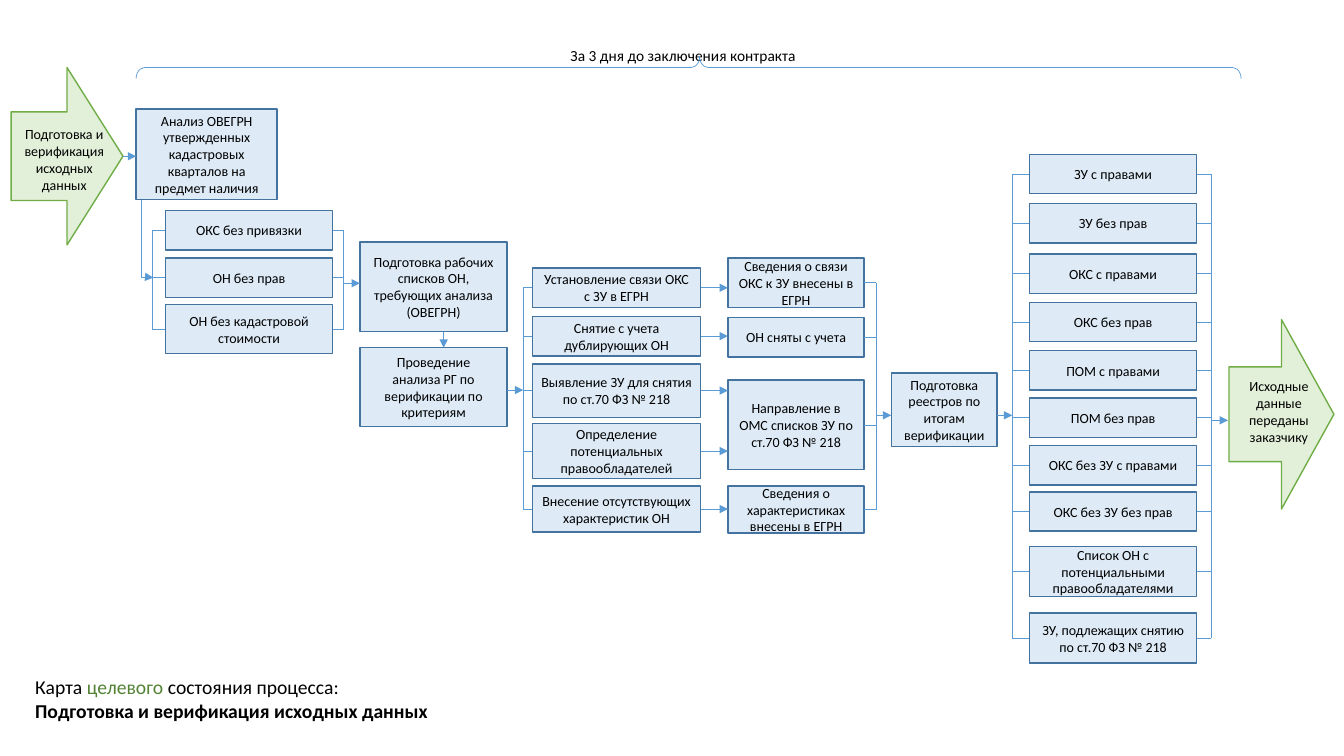
from dataclasses import dataclass

from lxml import etree
from pptx import Presentation
from pptx.dml.color import RGBColor
from pptx.enum.shapes import MSO_CONNECTOR as LINK, MSO_SHAPE as SHAPE
from pptx.enum.text import MSO_ANCHOR as ANCHOR, PP_ALIGN as ALIGN
from pptx.oxml.ns import qn
from pptx.util import Inches, Pt


@dataclass(frozen=True)
class Theme:
    font: str = "Calibri"
    text: str = "000000"
    accent: str = "548235"
    step_fill: str = "DEEBF7"
    step_line: str = "43739E"
    stage_fill: str = "E2F0D9"
    stage_line: str = "70AD47"
    link: str = "5B9BD5"
    body: float = 10
    caption: float = 11
    title: float = 14
    outline: float = 1
    link_width: float = 0.5


@dataclass(frozen=True)
class Box:
    left: float
    top: float
    width: float
    height: float

    @property
    def right(self):
        return self.left + self.width

    @property
    def bottom(self):
        return self.top + self.height

    @property
    def center(self):
        return self.left + self.width / 2

    @property
    def middle(self):
        return self.top + self.height / 2

    def emu(self):
        return [Inches(v) for v in (self.left, self.top, self.width, self.height)]


THEME = Theme()


# Basic parts
def write(shape, lines, size=THEME.body, align=ALIGN.CENTER, anchor=ANCHOR.MIDDLE, margin=0.1):
    """Each line is a list of (text, color, bold) runs."""
    frame = shape.text_frame
    frame.word_wrap = True
    frame.vertical_anchor = anchor
    frame.margin_left = frame.margin_right = Inches(margin)
    for i, runs in enumerate(lines):
        paragraph = frame.paragraphs[0] if i == 0 else frame.add_paragraph()
        paragraph.alignment = align
        for text, color, bold in runs:
            run = paragraph.add_run()
            run.text = text
            run.font.name = THEME.font
            run.font.size = Pt(size)
            run.font.bold = bold
            run.font.color.rgb = RGBColor.from_string(color)


def plain(text):
    return [[(text, THEME.text, False)]]


def add_block(slide, kind, box, line, fill=None, width=THEME.outline):
    block = slide.shapes.add_shape(kind, *box.emu())
    block.shadow.inherit = False
    if fill:
        block.fill.solid()
        block.fill.fore_color.rgb = RGBColor.from_string(fill)
    else:
        block.fill.background()
    block.line.color.rgb = RGBColor.from_string(line)
    block.line.width = Pt(width)
    return block


def step(slide, box, text, margin=0.1):
    block = add_block(slide, SHAPE.RECTANGLE, box, THEME.step_line, THEME.step_fill)
    write(block, plain(text), margin=margin)
    return box


def link(slide, x1, y1, x2, y2, arrow=False, kind=LINK.STRAIGHT):
    connector = slide.shapes.add_connector(kind, *[Inches(v) for v in (x1, y1, x2, y2)])
    connector.line.color.rgb = RGBColor.from_string(THEME.link)
    connector.line.width = Pt(THEME.link_width)
    properties = connector._element.spPr
    if arrow:
        etree.SubElement(properties.find(qn("a:ln")), qn("a:tailEnd"), type="triangle")
    etree.SubElement(properties, qn("a:effectLst"))
    return connector


def drop_link(slide, x1, y1, x2, y2):
    """Elbow arrow that goes down first, then right."""
    long, short = y2 - y1, x2 - x1
    left, top = (x1 + x2 - long) / 2, (y1 + y2 - short) / 2
    elbow = link(slide, left, top, left + long, top + short, True, LINK.ELBOW)
    frame = elbow._element.spPr.find(qn("a:xfrm"))
    frame.set("rot", "16200000")
    frame.set("flipH", "1")
    guides = elbow._element.spPr.find(qn("a:prstGeom")).find(qn("a:avLst"))
    etree.SubElement(guides, qn("a:gd"), name="adj1", fmla="val 99100")


def bracket(slide, spine, boxes, side):
    """Vertical line with a tick to the given side of every box."""
    link(slide, spine, boxes[0].middle, spine, boxes[-1].middle)
    for box in boxes:
        link(slide, spine, box.middle, getattr(box, side), box.middle)


# Regions
def column(slide, area, rows):
    """Rows are (offset from the top, height, text[, margin])."""
    return [step(slide, Box(area.left, area.top + offset, area.width, height), *content)
            for offset, height, *content in rows]


def stage(slide, box, text):
    add_block(slide, SHAPE.RIGHT_ARROW, box, THEME.stage_line, THEME.stage_fill)
    label = Box(box.left, box.top + 0.52, 0.95 * box.width, 0.78)
    write(slide.shapes.add_textbox(*label.emu()), plain(text), margin=0.05)


def period(slide, area, text):
    caption = Box(area.left + 4.21, area.top, 2.85, 0.29)
    write(slide.shapes.add_textbox(*caption.emu()), plain(text), THEME.caption,
          ALIGN.LEFT, ANCHOR.TOP)
    depth = 0.22
    turned = Box(area.center - depth / 2, area.bottom - depth / 2 - area.width / 2,
                 depth, area.width)
    brace = add_block(slide, SHAPE.RIGHT_BRACE, turned, THEME.link, width=THEME.link_width)
    brace.rotation = 270
    brace.adjustments[0], brace.adjustments[1] = 0.38, 0.51


def title(slide, box):
    write(slide.shapes.add_textbox(*box.emu()), [
        [("Карта ", THEME.text, False), ("целевого", THEME.accent, False),
         (" состояния процесса:", THEME.text, False)],
        [("Подготовка и верификация исходных данных", THEME.text, True)],
    ], THEME.title, ALIGN.LEFT, ANCHOR.TOP)


def process(slide, area):
    x, y = area.left, area.top

    # Steps
    analysis = step(slide, Box(x, y, 1.4, 0.9),
                    "Анализ ОВЕГРН утвержденных кадастровых кварталов на предмет наличия")
    checks = column(slide, Box(x + 0.29, y + 1.01, 1.66, 1.42), [
        (0, 0.39, "ОКС без привязки"),
        (0.47, 0.39, "ОН без прав"),
        (0.93, 0.49, "ОН без кадастровой стоимости")])
    lists, review = column(slide, Box(x + 2.22, y + 1.32, 1.46, 1.83), [
        (0, 0.89, "Подготовка рабочих списков ОН, требующих анализа (ОВЕГРН)"),
        (1.05, 0.78, "Проведение анализа РГ по верификации по критериям", 0.15)])
    works = column(slide, Box(x + 3.93, y + 1.58, 1.67, 2.62), [
        (0, 0.39, "Установление связи ОКС с ЗУ в ЕГРН"),
        (0.48, 0.39, "Снятие с учета дублирующих ОН"),
        (0.95, 0.53, "Выявление ЗУ для снятия по ст.70 ФЗ № 218", 0.06),
        (1.54, 0.55, "Определение потенциальных правообладателей"),
        (2.16, 0.46, "Внесение отсутствующих характеристик ОН", 0.06)])
    results = column(slide, Box(x + 5.87, y + 1.48, 1.35, 2.73), [
        (0, 0.49, "Сведения о связи ОКС к ЗУ внесены в ЕГРН"),
        (0.59, 0.39, "ОН сняты с учета"),
        (1.21, 0.89, "Направление в ОМС списков ЗУ по ст.70 ФЗ № 218"),
        (2.26, 0.47, "Сведения о характеристиках внесены в ЕГРН")])
    registers = step(slide, Box(x + 7.49, y + 2.62, 1.05, 0.73),
                     "Подготовка реестров по итогам верификации")
    outputs = column(slide, Box(x + 8.86, y + 0.45, 1.66, 5.05), [
        (0, 0.39, "ЗУ с правами"),
        (0.49, 0.39, "ЗУ без прав"),
        (0.99, 0.39, "ОКС с правами"),
        (1.47, 0.39, "ОКС без прав"),
        (1.95, 0.39, "ПОМ с правами"),
        (2.42, 0.39, "ПОМ без прав"),
        (2.89, 0.39, "ОКС без ЗУ с правами"),
        (3.35, 0.39, "ОКС без ЗУ без прав"),
        (3.89, 0.5, "Список ОН с потенциальными правообладателями"),
        (4.55, 0.5, "ЗУ, подлежащих снятию по ст.70 ФЗ № 218")])

    # Brackets
    for offset, boxes, side in [(0.16, checks, "left"), (2.06, checks, "right"),
                                (3.84, works, "left"), (7.34, results, "right"),
                                (8.69, outputs, "left"), (10.66, outputs, "right")]:
        bracket(slide, x + offset, boxes, side)

    # Arrows
    drop_link(slide, x + 0.05, analysis.bottom, x + 0.17, checks[1].middle)
    link(slide, lists.center + 0.1, lists.bottom, lists.center + 0.1, review.top, True)
    for start, end, level in [(x - 0.13, x, 1.55), (x + 2.06, lists.left, 2.81),
                              (review.right, x + 3.84, 3.87),
                              (x + 7.34, registers.left, 4.12),
                              (registers.right, x + 8.69, 4.12),
                              (x + 10.67, x + 10.83, 4.17)]:
        link(slide, start, level, end, level, True)
    for work in works:
        link(slide, work.right, work.middle, results[0].left, work.middle, True)


def main():
    deck = Presentation()
    deck.slide_width, deck.slide_height = Inches(13.33), Inches(7.5)
    slide = deck.slides.add_slide(deck.slide_layouts[6])
    stage(slide, Box(0.11, 0.67, 1.11, 1.76), "Подготовка и верификация исходных данных")
    stage(slide, Box(12.19, 3.17, 1.04, 1.88), "Исходные данные переданы заказчику")
    process(slide, Box(1.35, 1.08, 10.83, 5.5))
    period(slide, Box(1.35, 0.41, 10.96, 0.37), "За 3 дня до заключения контракта")
    title(slide, Box(0.25, 6.65, 5.3, 0.57))
    deck.save("out.pptx")


if __name__ == "__main__":
    main()
